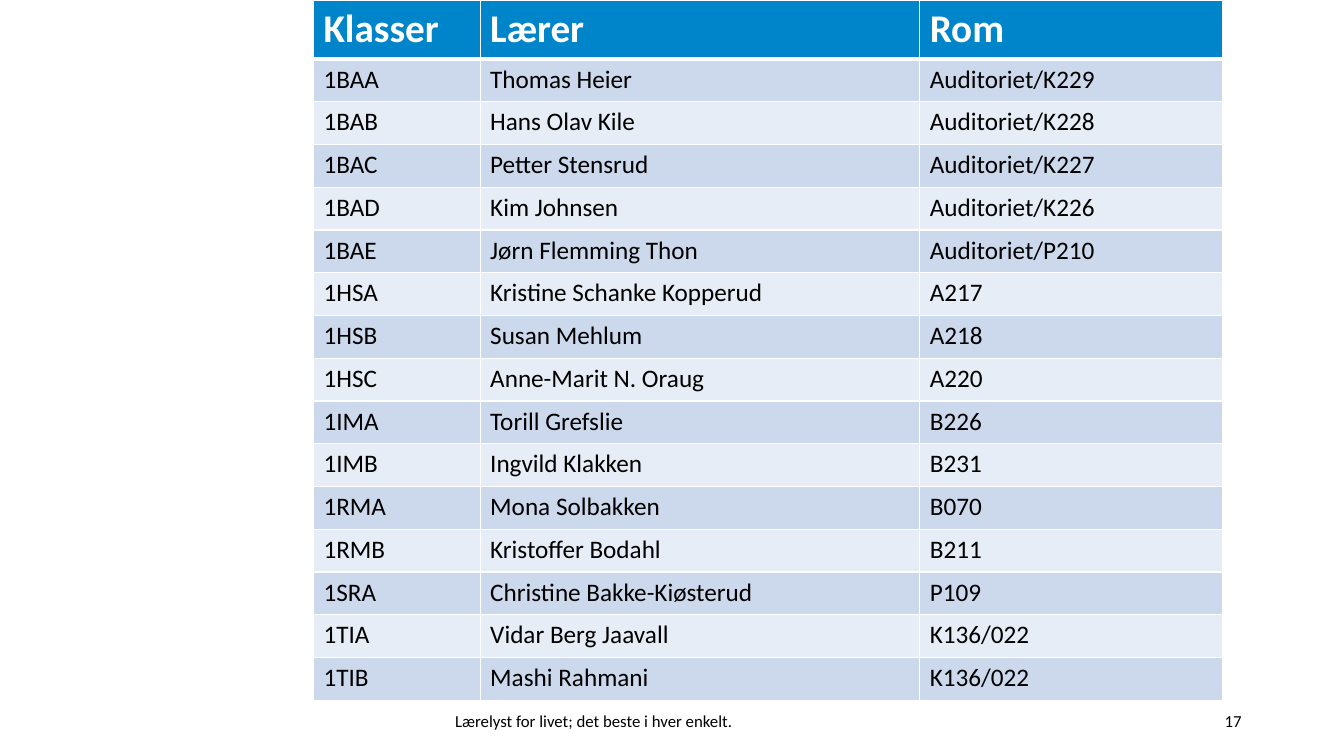
from typing import NamedTuple

from lxml import etree
from pptx import Presentation
from pptx import util as u
from pptx.dml.color import RGBColor
from pptx.enum import text
from pptx.oxml.ns import qn


class ClassRow(NamedTuple):
    name: str
    teacher: str
    room: str


class FooterText(NamedTuple):
    wording: str
    left: float
    width: float
    align: text.PP_ALIGN


HEADER = ClassRow("Klasser", "Lærer", "Rom")
CLASSES = [
    ClassRow("1BAA", "Thomas Heier", "Auditoriet/K229"),
    ClassRow("1BAB", "Hans Olav Kile", "Auditoriet/K228"),
    ClassRow("1BAC", "Petter Stensrud", "Auditoriet/K227"),
    ClassRow("1BAD", "Kim Johnsen", "Auditoriet/K226"),
    ClassRow("1BAE", "Jørn Flemming Thon", "Auditoriet/P210"),
    ClassRow("1HSA", "Kristine Schanke Kopperud", "A217"),
    ClassRow("1HSB", "Susan Mehlum", "A218"),
    ClassRow("1HSC", "Anne-Marit N. Oraug", "A220"),
    ClassRow("1IMA", "Torill Grefslie", "B226"),
    ClassRow("1IMB", "Ingvild Klakken", "B231"),
    ClassRow("1RMA", "Mona Solbakken", "B070"),
    ClassRow("1RMB", "Kristoffer Bodahl", "B211"),
    ClassRow("1SRA", "Christine Bakke-Kiøsterud", "P109"),
    ClassRow("1TIA", "Vidar Berg Jaavall", "K136/022"),
    ClassRow("1TIB", "Mashi Rahmani", "K136/022"),
]
FOOTERS = [
    FooterText("Lærelyst for livet; det beste i hver enkelt.", 11.22, 11.43, text.PP_ALIGN.LEFT),
    FooterText("17", 23.92, 7.62, text.PP_ALIGN.RIGHT),
]
COLUMN_WIDTHS = (4.2, 11.08, 7.63)
TABLE_LEFT = 7.9
TABLE_HEIGHT = 17.65
HEADER_HEIGHT = 1.49
FOOTER_HEIGHT = 1.02
HEADER_FILL = "0085CA"
BAND_FILLS = ("CCD9EC", "E7EDF6")
WHITE = "FFFFFF"
BLACK = "000000"


def colour(value: str) -> RGBColor:
    return RGBColor.from_string(value)


def style_runs(paragraph, size: float, ink: str, bold: bool = False) -> None:
    for run in paragraph.runs:
        run.font.name = "Calibri"
        run.font.size = u.Pt(size)
        run.font.bold = bold
        run.font.color.rgb = colour(ink)


def add_borders(cell, row: int) -> None:
    widths = {"L": 1, "R": 1, "T": 3 if row == 1 else 1, "B": 3 if row == 0 else 1}
    properties = cell._tc.get_or_add_tcPr()
    for side, width in widths.items():
        line = etree.SubElement(properties, qn(f"a:ln{side}"), w=str(u.Pt(width)))
        fill = etree.SubElement(line, qn("a:solidFill"))
        etree.SubElement(fill, qn("a:srgbClr"), val=WHITE)


def fill_row(table, row: int, entry: ClassRow) -> None:
    is_header = row == 0
    background = HEADER_FILL if is_header else BAND_FILLS[(row - 1) % 2]
    for column, wording in enumerate(entry):
        cell = table.cell(row, column)
        add_borders(cell, row)
        cell.fill.solid()
        cell.fill.fore_color.rgb = colour(background)
        cell.text_frame.text = wording
        style_runs(cell.text_frame.paragraphs[0], 28 if is_header else 18,
                   WHITE if is_header else BLACK, is_header)


def add_class_table(slide) -> None:
    table = slide.shapes.add_table(
        len(CLASSES) + 1, len(COLUMN_WIDTHS), u.Cm(TABLE_LEFT), u.Cm(0),
        u.Cm(sum(COLUMN_WIDTHS)), u.Cm(TABLE_HEIGHT)).table
    for column, width in zip(table.columns, COLUMN_WIDTHS):
        column.width = u.Cm(width)
    class_height = (TABLE_HEIGHT - HEADER_HEIGHT) / len(CLASSES)
    for row, entry in enumerate([HEADER, *CLASSES]):
        table.rows[row].height = u.Cm(class_height if row else HEADER_HEIGHT)
        fill_row(table, row, entry)


def add_footer(slide, footer: FooterText) -> None:
    frame = slide.shapes.add_textbox(
        u.Cm(footer.left), u.Cm(TABLE_HEIGHT), u.Cm(footer.width), u.Cm(FOOTER_HEIGHT)).text_frame
    frame.word_wrap = True
    frame.vertical_anchor = text.MSO_ANCHOR.MIDDLE
    frame.text = footer.wording
    frame.paragraphs[0].alignment = footer.align
    style_runs(frame.paragraphs[0], 12, BLACK)


def main() -> None:
    deck = Presentation()
    deck.slide_width = u.Cm(33.87)
    deck.slide_height = u.Cm(19.05)
    slide = deck.slides.add_slide(deck.slide_layouts[6])
    add_class_table(slide)
    for footer in FOOTERS:
        add_footer(slide, footer)
    deck.save("out.pptx")


if __name__ == "__main__":
    main()
